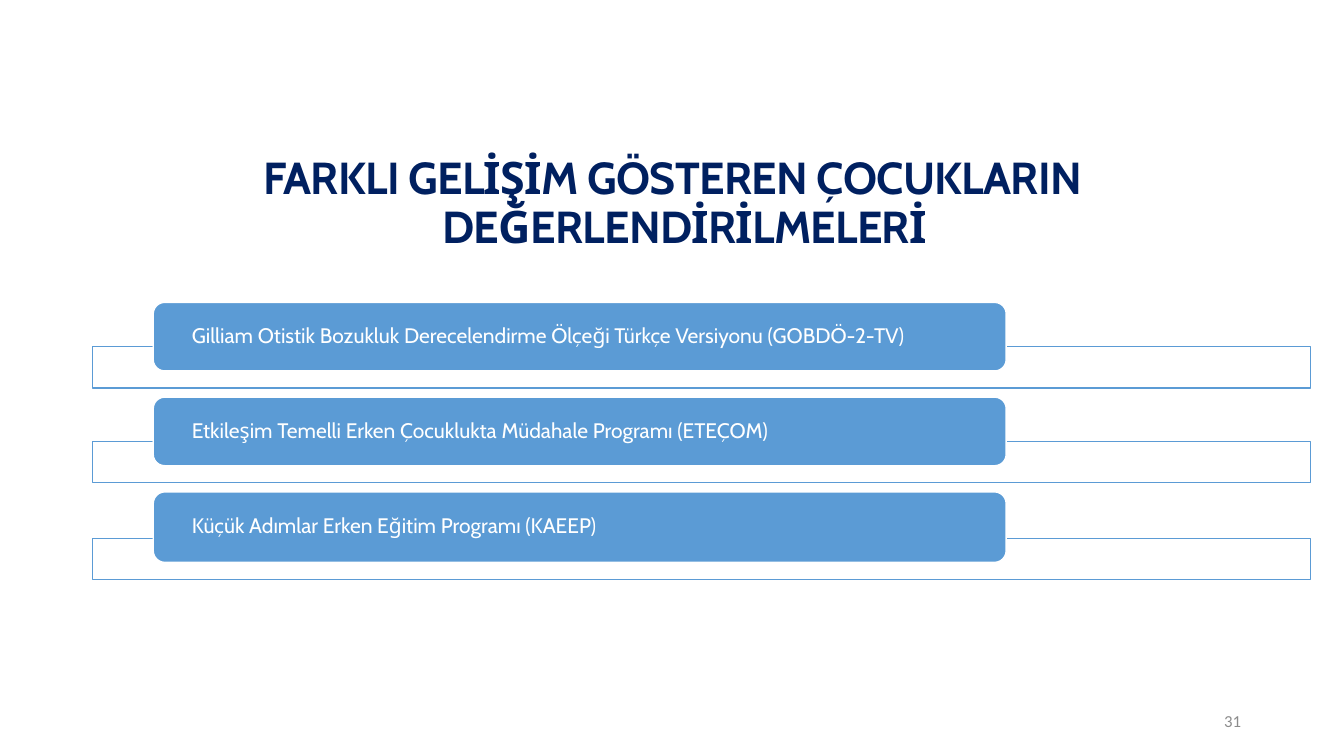
from pptx import Presentation
from pptx.dml.color import RGBColor
from pptx.enum.shapes import MSO_SHAPE
from pptx.enum.text import MSO_ANCHOR, MSO_AUTO_SIZE, PP_ALIGN
from pptx.util import Inches, Pt

RECTANGLE = MSO_SHAPE.RECTANGLE
ROUNDED = MSO_SHAPE.ROUNDED_RECTANGLE
MIDDLE = MSO_ANCHOR.MIDDLE
NO_AUTOFIT = MSO_AUTO_SIZE.NONE
LEFT, CENTER, RIGHT = PP_ALIGN.LEFT, PP_ALIGN.CENTER, PP_ALIGN.RIGHT

NAVY = RGBColor(0x00, 0x20, 0x60)
BLUE = RGBColor(0x5B, 0x9B, 0xD5)
WHITE = RGBColor(0xFF, 0xFF, 0xFF)
GRAY = RGBColor(0x8C, 0x8C, 0x8C)

SLIDE_WIDTH, SLIDE_HEIGHT = 13.33, 7.5
MARGIN = 0.92
CONTENT_WIDTH = SLIDE_WIDTH - 2 * MARGIN
FRAME_WIDTH, FRAME_HEIGHT = 12.08, 0.41
FRAME_OVERLAP = 0.24
LABEL_LEFT, LABEL_WIDTH = 1.52, 8.46
LABEL_PADDING = 0.35
FIRST_ROW, ROW_PITCH = 3, 0.94

TITLE = "FARKLI GELİŞİM GÖSTEREN ÇOCUKLARIN DEĞERLENDİRİLMELERİ"
TOOLS = [
    ("Gilliam Otistik Bozukluk Derecelendirme Ölçeği Türkçe Versiyonu (GOBDÖ-2-TV)", 0.68),
    ("Etkileşim Temelli Erken Çocuklukta Müdahale Programı (ETEÇOM)", 0.68),
    ("Küçük Adımlar Erken Eğitim Programı (KAEEP)", 0.7),
]


def write_text(shape, text, size, color, alignment, font="Cabin", bold=False):
    frame = shape.text_frame
    frame.text = text
    frame.word_wrap = True
    frame.auto_size = NO_AUTOFIT
    frame.vertical_anchor = MIDDLE
    paragraph = frame.paragraphs[0]
    paragraph.alignment = alignment
    paragraph.line_spacing = 0.9
    run = paragraph.runs[0]
    run.font.name = font
    run.font.size = Pt(size)
    run.font.bold = bold
    run.font.color.rgb = color
    return paragraph


def add_box(slide, preset, left, top, width, height, fill, line):
    shape = slide.shapes.add_shape(
        preset, Inches(left), Inches(top), Inches(width), Inches(height))
    shape.shadow.inherit = False
    shape.fill.solid()
    shape.fill.fore_color.rgb = fill
    shape.line.color.rgb = line
    shape.line.width = Pt(1)
    return shape


def add_title(slide):
    title = slide.shapes.title
    title.left, title.top = Inches(MARGIN), Inches(1.68)
    title.width, title.height = Inches(CONTENT_WIDTH), Inches(0.7)
    paragraph = write_text(title, TITLE, 32, NAVY, CENTER, bold=True)
    properties = paragraph._p.get_or_add_pPr()
    properties.set("marL", str(Inches(0.25)))
    properties.set("indent", str(Inches(-0.25)))
    paragraph.runs[0]._r.get_or_add_rPr().set("spc", "-50")


def add_tool(slide, top, text, height):
    frame_top = top + height - FRAME_OVERLAP
    add_box(slide, RECTANGLE, MARGIN, frame_top, FRAME_WIDTH, FRAME_HEIGHT, WHITE, BLUE)
    label = add_box(slide, ROUNDED, LABEL_LEFT, top, LABEL_WIDTH, height, BLUE, WHITE)
    write_text(label, text, 15, WHITE, LEFT)
    label.text_frame.margin_left = label.text_frame.margin_right = Inches(LABEL_PADDING)
    label.text_frame.margin_top = label.text_frame.margin_bottom = 0


def add_page_number(slide):
    width = 3
    left = SLIDE_WIDTH - MARGIN - width
    box = slide.shapes.add_textbox(Inches(left), Inches(6.95), Inches(width), Inches(0.4))
    paragraph = write_text(box, "31", 12, GRAY, RIGHT, font="Calibri")
    paragraph.line_spacing = 1.0


def main():
    presentation = Presentation()
    presentation.slide_width = Inches(SLIDE_WIDTH)
    presentation.slide_height = Inches(SLIDE_HEIGHT)
    slide = presentation.slides.add_slide(presentation.slide_layouts[5])
    add_title(slide)
    for row, (text, height) in enumerate(TOOLS):
        add_tool(slide, FIRST_ROW + row * ROW_PITCH, text, height)
    add_page_number(slide)
    presentation.save("out.pptx")


if __name__ == "__main__":
    main()
